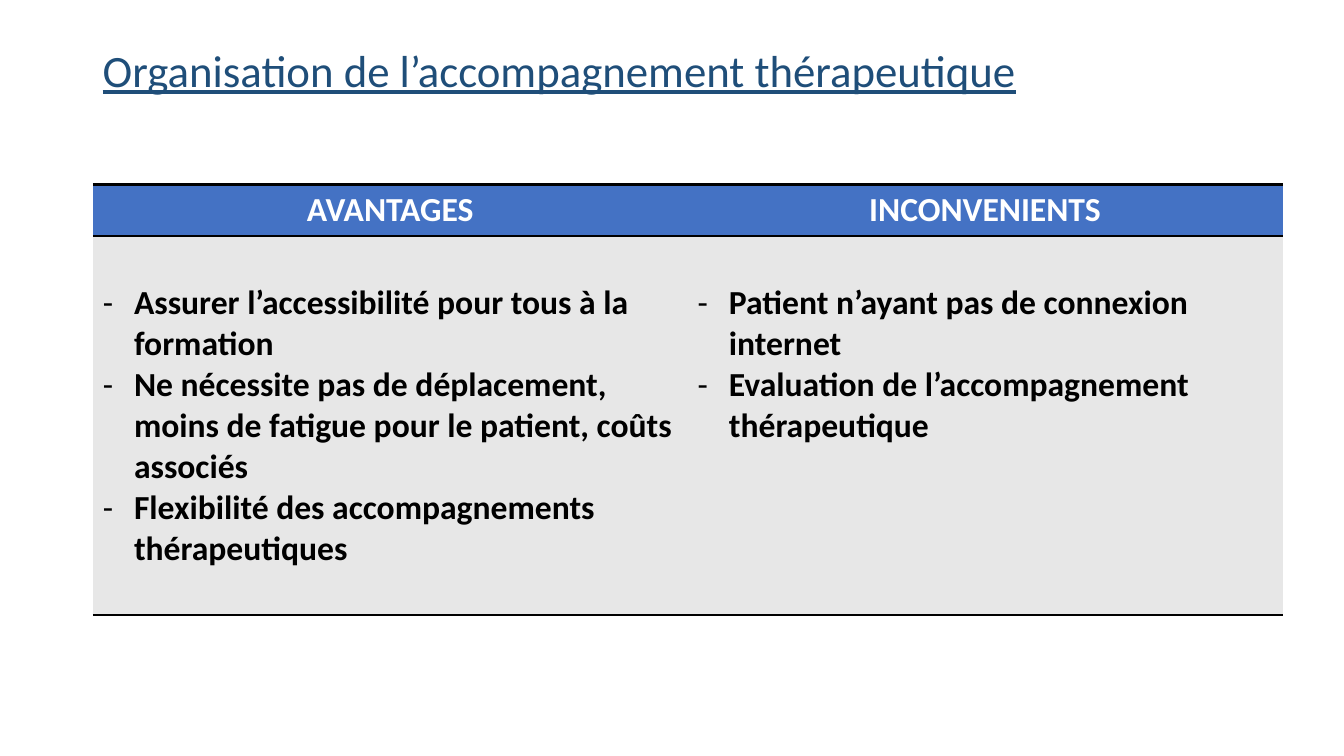
from dataclasses import dataclass

from lxml import etree
from pptx import Presentation
from pptx.dml.color import RGBColor
from pptx.enum.text import MSO_ANCHOR, PP_ALIGN
from pptx.oxml.ns import qn
from pptx.table import _Cell
from pptx.text.text import _Paragraph
from pptx.util import Inches, Pt

CENTER = PP_ALIGN.CENTER
MIDDLE = MSO_ANCHOR.MIDDLE
FONT = "Calibri"
COLORS = {
    "title": "1F4E79",
    "header": "4472C4",
    "header_text": "FFFFFF",
    "body": "E7E7E7",
    "body_text": "000000",
    "border": "000000",
}


@dataclass
class Column:
    heading: str
    points: list[str]


COLUMNS = [
    Column("AVANTAGES", [
        "Assurer l’accessibilité pour tous à la formation",
        "Ne nécessite pas de déplacement, moins de fatigue pour le patient, coûts associés",
        "Flexibilité des accompagnements thérapeutiques",
    ]),
    Column("INCONVENIENTS", [
        "Patient n’ayant pas de connexion internet",
        "Evaluation de l’accompagnement thérapeutique",
    ]),
]
ROW_HEIGHTS = [0.51, 3.76]
COLUMN_WIDTH = 5.9


def style_runs(para: _Paragraph, size: float, color: str, bold: bool) -> None:
    for span in para.runs:
        span.font.name = FONT
        span.font.size = Pt(size)
        span.font.bold = bold
        span.font.color.rgb = RGBColor.from_string(COLORS[color])


def add_dash(para: _Paragraph) -> None:
    properties = para._p.get_or_add_pPr()
    properties.set("marL", str(Inches(0.31)))
    properties.set("indent", str(-Inches(0.31)))
    etree.SubElement(properties, qn("a:buFont"), typeface=FONT)
    etree.SubElement(properties, qn("a:buChar"), char="-")


def style_cell(cell: _Cell, fill: str) -> None:
    properties = cell._tc.get_or_add_tcPr()
    for side in ("lnL", "lnR"):
        line = etree.SubElement(properties, qn(f"a:{side}"), w="0")
        etree.SubElement(line, qn("a:noFill"))
    for side in ("lnT", "lnB"):
        line = etree.SubElement(properties, qn(f"a:{side}"), w=str(Pt(2)))
        solid = etree.SubElement(line, qn("a:solidFill"))
        etree.SubElement(solid, qn("a:srgbClr"), val=COLORS["border"])
    cell.fill.solid()
    cell.fill.fore_color.rgb = RGBColor.from_string(COLORS[fill])


def fill_header(cell: _Cell, heading: str) -> None:
    style_cell(cell, "header")
    para = cell.text_frame.paragraphs[0]
    para.text = heading
    para.alignment = CENTER
    style_runs(para, 24, "header_text", True)


def fill_body(cell: _Cell, points: list[str]) -> None:
    style_cell(cell, "body")
    cell.margin_top = Inches(0.46)
    cell.text_frame.text = "\n".join(points)
    for para in cell.text_frame.paragraphs:
        add_dash(para)
        style_runs(para, 24, "body_text", True)


def main() -> None:
    deck = Presentation()
    deck.slide_width = Inches(13.33)
    deck.slide_height = Inches(7.5)
    page = deck.slides.add_slide(deck.slide_layouts[6])

    box = page.shapes.add_textbox(Inches(0.92), Inches(0), Inches(11.5), Inches(1.45))
    box.text_frame.word_wrap = True
    box.text_frame.vertical_anchor = MIDDLE
    box.text_frame.text = "Organisation de l’accompagnement thérapeutique"
    title = box.text_frame.paragraphs[0]
    title.line_spacing = 0.9
    style_runs(title, 32, "title", False)
    title.runs[0].font.underline = True

    table = page.shapes.add_table(
        len(ROW_HEIGHTS), len(COLUMNS), Inches(0.92), Inches(1.83),
        Inches(COLUMN_WIDTH * len(COLUMNS)), Inches(sum(ROW_HEIGHTS)),
    ).table
    table.horz_banding = False
    for row, height in zip(table.rows, ROW_HEIGHTS):
        row.height = Inches(height)
    for index, column in enumerate(COLUMNS):
        table.columns[index].width = Inches(COLUMN_WIDTH)
        fill_header(table.cell(0, index), column.heading)
        fill_body(table.cell(1, index), column.points)

    deck.save("out.pptx")


if __name__ == "__main__":
    main()
